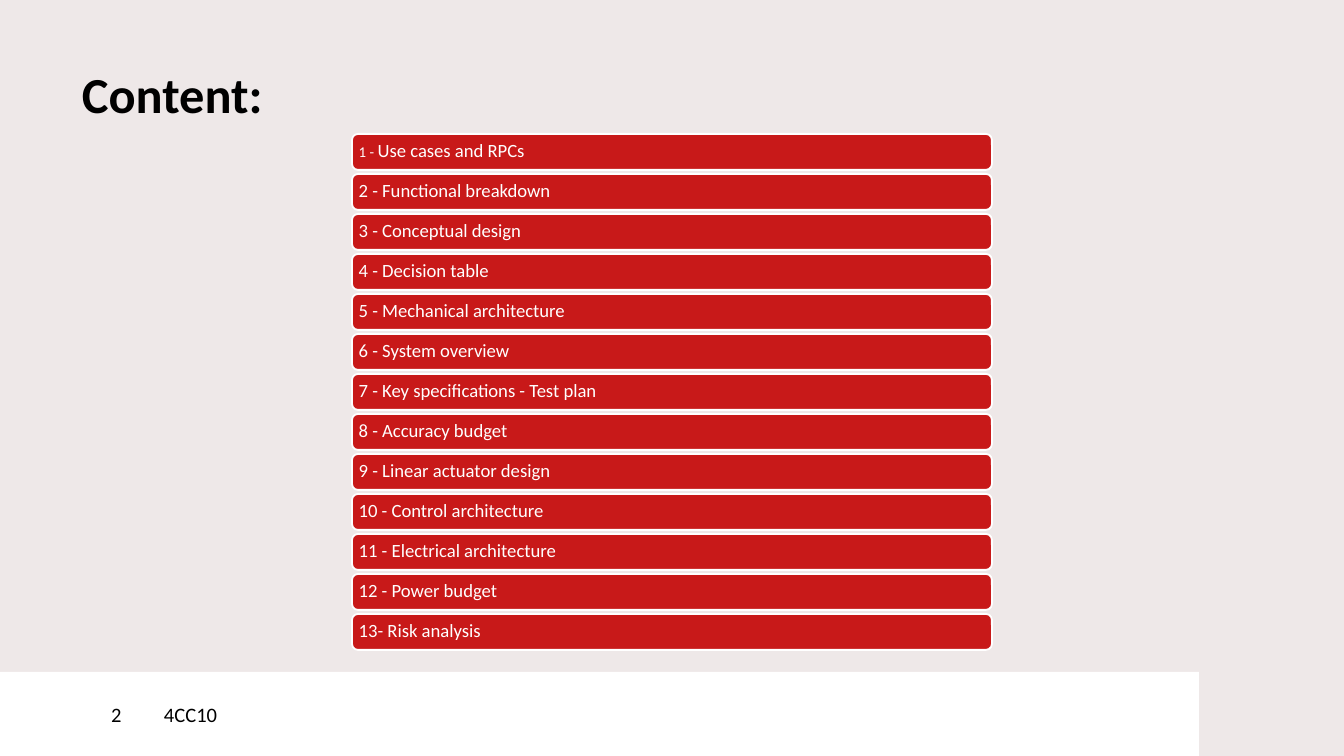
from pptx import Presentation
from pptx.dml.color import RGBColor
from pptx.enum.shapes import MSO_SHAPE
from pptx.enum.text import MSO_ANCHOR, PP_ALIGN
from pptx.util import Emu, Pt

RECT, ROUNDED = MSO_SHAPE.RECTANGLE, MSO_SHAPE.ROUNDED_RECTANGLE
TOP, MIDDLE, LEFT = MSO_ANCHOR.TOP, MSO_ANCHOR.MIDDLE, PP_ALIGN.LEFT
EMU_PER_PX = 914400 / 134.4
FONT = "Calibri"
COLORS = {"page": "EEE8E8", "red": "C81919", "white": "FFFFFF", "black": "000000"}
TOPICS = [
    [("1 - ", 8), ("Use cases and RPCs", 10)],
    [("2 - Functional breakdown", 10)],
    [("3 - Conceptual design", 10)],
    [("4 - Decision table", 10)],
    [("5 - Mechanical architecture", 10)],
    [("6 - System overview", 10)],
    [("7 - Key specifications - Test plan", 10)],
    [("8 - Accuracy budget", 10)],
    [("9 - Linear actuator design", 10)],
    [("10 - Control architecture", 10)],
    [("11 - Electrical architecture", 10)],
    [("12 - Power budget", 10)],
    [("13- Risk analysis", 10)],
]
BAR_LEFT, BAR_TOP, BAR_WIDTH, BAR_HEIGHT, BAR_PITCH = 352, 134, 640, 36, 40


def px(length):
    return Emu(round(length * EMU_PER_PX))


def color(name):
    return RGBColor.from_string(COLORS[name])


class ContentSlide:
    """Holds the style and the current slide, and draws its elements."""

    def __init__(self, deck):
        self.slide = deck.slides.add_slide(deck.slide_layouts[6])
        background = self.slide.background.fill
        background.solid()
        background.fore_color.rgb = color("page")

    def label(self, frame, runs, ink, anchor=MIDDLE, inset=0, bold=False):
        frame.word_wrap = True
        frame.vertical_anchor = anchor
        frame.margin_left = px(inset)
        frame.margin_top = frame.margin_right = frame.margin_bottom = 0
        paragraph = frame.paragraphs[0]
        paragraph.alignment = LEFT
        for words, size in runs:
            run = paragraph.add_run()
            run.text = words
            run.font.name = FONT
            run.font.size = Pt(size)
            run.font.bold = bold
            run.font.color.rgb = color(ink)
        return paragraph

    def title(self, words, left, top, width, height):
        box = self.slide.shapes.add_textbox(px(left), px(top), px(width), px(height))
        self.label(box.text_frame, [(words, 27)], "black", TOP, bold=True)

    def block(self, preset, fill, left, top, width, height):
        shape = self.slide.shapes.add_shape(
            preset, px(left), px(top), px(width), px(height))
        shape.shadow.inherit = False
        shape.fill.solid()
        shape.fill.fore_color.rgb = color(fill)
        shape.line.fill.background()
        return shape

    def footer(self, words, left, width, inset=0):
        panel = self.block(RECT, "white", left, 672, width, 84)
        self.label(panel.text_frame, [(words, 11)], "black", inset=inset)

    def bar(self, runs, top):
        bar = self.block(ROUNDED, "red", BAR_LEFT, top, BAR_WIDTH, BAR_HEIGHT)
        bar.line.color.rgb = color("white")
        bar.line.width = Pt(1)
        paragraph = self.label(bar.text_frame, runs, "white", inset=5)
        paragraph.line_spacing = 0.9


def main():
    deck = Presentation()
    deck.slide_width, deck.slide_height = px(1344), px(756)
    content = ContentSlide(deck)
    content.title("Content:", 82, 63, 708, 108)
    content.footer("4CC10", 164, 1035)
    content.footer("2", 0, 164, inset=111)
    for index, topic in enumerate(TOPICS):
        content.bar(topic, BAR_TOP + index * BAR_PITCH)
    deck.save("out.pptx")


if __name__ == "__main__":
    main()
